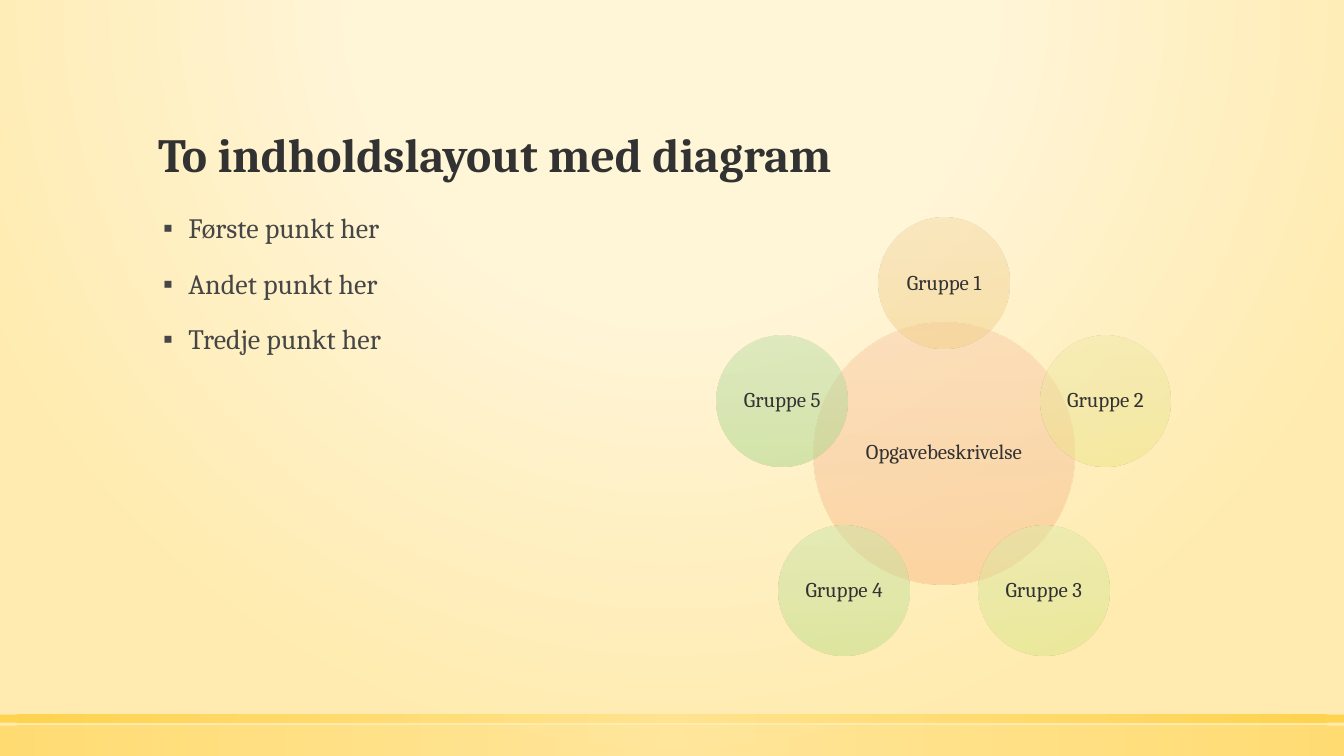
"""Build a two-content slide: three points beside a radial group diagram."""
from dataclasses import dataclass
from math import cos, radians, sin

from lxml.etree import SubElement
from pptx import Presentation
from pptx.dml.color import RGBColor
from pptx.enum.shapes import MSO_SHAPE
from pptx.enum.text import MSO_ANCHOR, PP_ALIGN
from pptx.oxml.ns import qn
from pptx.util import Inches, Pt

SLIDE_WIDTH, SLIDE_HEIGHT = Inches(13.333), Inches(7.5)


@dataclass(frozen=True)
class Theme:
    """Colours and type sizes of the slide."""

    font: str = "Cambria"
    dark: str = "323232"
    muted: str = "464646"
    title_size: int = 34
    body_size: int = 20
    label_size: int = 15
    background: tuple = ((0, "FFF5D7", 59), (40, "FFF5D7", 66), (100, "FFEBAF", 100))
    bar: tuple = ("FFE186", "FFCD36")
    hub: tuple = ("FACDA9", "F8C39A", "FBBB87")
    groups: tuple = (
        ("F6DBA8", "F3D49A", "F5D187"),
        ("F1EAA8", "EDE59A", "EEE587"),
        ("E0EBA8", "DAE79A", "D8E787"),
        ("CDE6A8", "C5E19A", "BEE088"),
        ("BFE0A9", "B4DA9B", "A9D889"),
    )


THEME = Theme()


def across(percent):
    """Return a share of the slide's width."""
    return round(SLIDE_WIDTH * percent / 100)


def down(percent):
    """Return a share of the slide's height."""
    return round(SLIDE_HEIGHT * percent / 100)


def even_stops(colours, opacity):
    """Spread colours evenly over a gradient at one opacity."""
    last = len(colours) - 1
    return [(100 * i / last, colour, opacity) for i, colour in enumerate(colours)]


def paint_gradient(fill, owner, stops, focus=None):
    """Fill with a downward gradient, or a circular one around focus."""
    fill.gradient()
    gradient = next(owner.iter(qn("a:gradFill")))
    for child in list(gradient):
        gradient.remove(child)
    stop_list = SubElement(gradient, qn("a:gsLst"))
    for position, colour, opacity in stops:
        stop = SubElement(stop_list, qn("a:gs"), pos=str(round(position * 1000)))
        tint = SubElement(stop, qn("a:srgbClr"), val=colour)
        if opacity < 100:
            SubElement(tint, qn("a:alpha"), val=str(opacity * 1000))
    if focus:
        circle = SubElement(gradient, qn("a:path"), {"path": "circle"})
        edges = {side: str(share * 1000) for side, share in zip("ltrb", focus)}
        SubElement(circle, qn("a:fillToRect"), edges)
    else:
        SubElement(gradient, qn("a:lin"), ang="5400000", scaled="0")


def style_paragraph(paragraph, size, colour, align, bold=False):
    """Format one paragraph and its runs."""
    paragraph.alignment = align
    paragraph.line_spacing = 0.9
    for run in paragraph.runs:
        run.font.name = THEME.font
        run.font.size = Pt(size)
        run.font.bold = bold
        run.font.color.rgb = RGBColor.from_string(colour)


def add_plain_shape(slide, kind, left, top, width, height, stops, focus=None):
    """Add a gradient shape without line or shadow."""
    shape = slide.shapes.add_shape(kind, left, top, width, height)
    shape.shadow.inherit = False
    shape.line.fill.background()
    paint_gradient(shape.fill, shape._element.spPr, stops, focus)
    return shape


def add_bar(slide, top, height, opacity):
    """Add a full-width bar near the slide's foot."""
    add_plain_shape(slide, MSO_SHAPE.RECTANGLE, 0, down(top), SLIDE_WIDTH,
                    down(height), even_stops(THEME.bar, opacity), (50, 50, 50, 50))


def add_circle(slide, label, centre_x, centre_y, diameter, colours):
    """Add a translucent labelled circle around a centre."""
    circle = add_plain_shape(slide, MSO_SHAPE.OVAL, round(centre_x - diameter / 2),
                             round(centre_y - diameter / 2), diameter, diameter,
                             even_stops(colours, 50))
    frame = circle.text_frame
    frame.text = label
    frame.word_wrap = True
    frame.vertical_anchor = MSO_ANCHOR.MIDDLE
    frame.margin_left = frame.margin_right = Inches(0.02)
    frame.margin_top = frame.margin_bottom = Inches(0.02)
    style_paragraph(frame.paragraphs[0], THEME.label_size, THEME.dark, PP_ALIGN.CENTER)


def add_radial_diagram(slide, hub_label, group_labels):
    """Place the groups evenly around the hub, clockwise from the top."""
    centre_x, centre_y, orbit = across(70.24), down(59.95), down(22.47)
    add_circle(slide, hub_label, centre_x, centre_y, down(34.6), THEME.hub)
    for i, (label, colours) in enumerate(zip(group_labels, THEME.groups)):
        angle = radians(360 / len(group_labels) * i)
        add_circle(slide, label, centre_x + orbit * sin(angle),
                   centre_y - orbit * cos(angle), down(17.3), colours)


def place(placeholder, left, top, width, height):
    """Move a placeholder to shares of the slide."""
    placeholder.left, placeholder.top = across(left), down(top)
    placeholder.width, placeholder.height = across(width), down(height)


def write_title(title, text):
    """Fill and format the title placeholder."""
    place(title, 11.02, 6.8, 78, 18)
    title.text_frame.text = text
    title.text_frame.vertical_anchor = MSO_ANCHOR.BOTTOM
    style_paragraph(title.text_frame.paragraphs[0], THEME.title_size, THEME.dark,
                    PP_ALIGN.LEFT, bold=True)


def write_points(body, points):
    """Fill the body placeholder with square-bulleted points."""
    place(body, 11.02, 27.73, 37.5, 60.13)
    body.text_frame.text = "\n".join(points)
    for paragraph in body.text_frame.paragraphs:
        style_paragraph(paragraph, THEME.body_size, THEME.muted, PP_ALIGN.LEFT)
        paragraph.space_before = Pt(18)
        properties = paragraph._p.get_or_add_pPr()
        properties.set("marL", str(Inches(0.3)))
        properties.set("indent", str(Inches(-0.25)))
        SubElement(properties, qn("a:buFont"), typeface="Arial")
        SubElement(properties, qn("a:buChar"), char="▪")


def main():
    """Build and save the slide."""
    presentation = Presentation()
    presentation.slide_width, presentation.slide_height = SLIDE_WIDTH, SLIDE_HEIGHT
    slide = presentation.slides.add_slide(presentation.slide_layouts[1])
    paint_gradient(slide.background.fill, slide._element, THEME.background,
                   (50, -80, 50, 180))
    add_bar(slide, 96, 4, 50)
    add_bar(slide, 94.53, 1.07, 80)
    write_title(slide.shapes.title, "To indholdslayout med diagram")
    write_points(slide.placeholders[1],
                 ["Første punkt her", "Andet punkt her", "Tredje punkt her"])
    add_radial_diagram(slide, "Opgavebeskrivelse",
                       [f"Gruppe {number}" for number in range(1, 6)])
    presentation.save("out.pptx")


if __name__ == "__main__":
    main()
